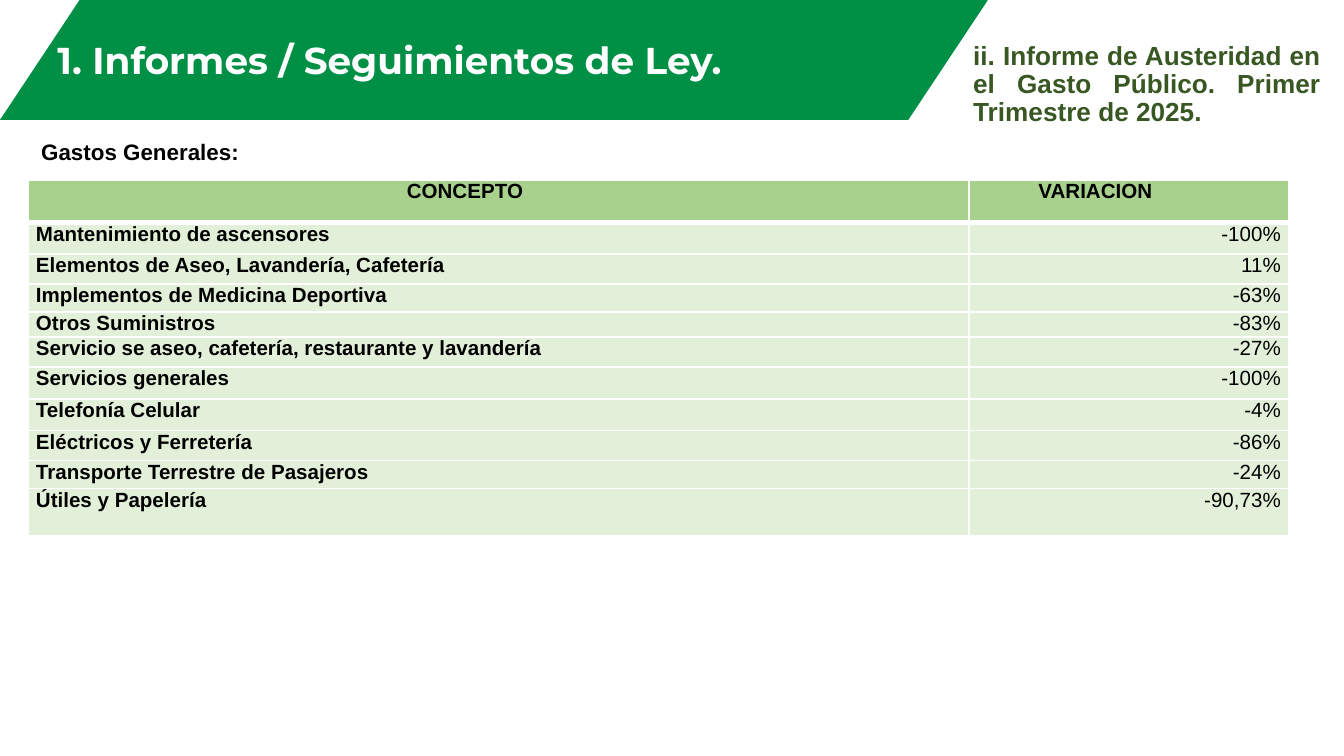
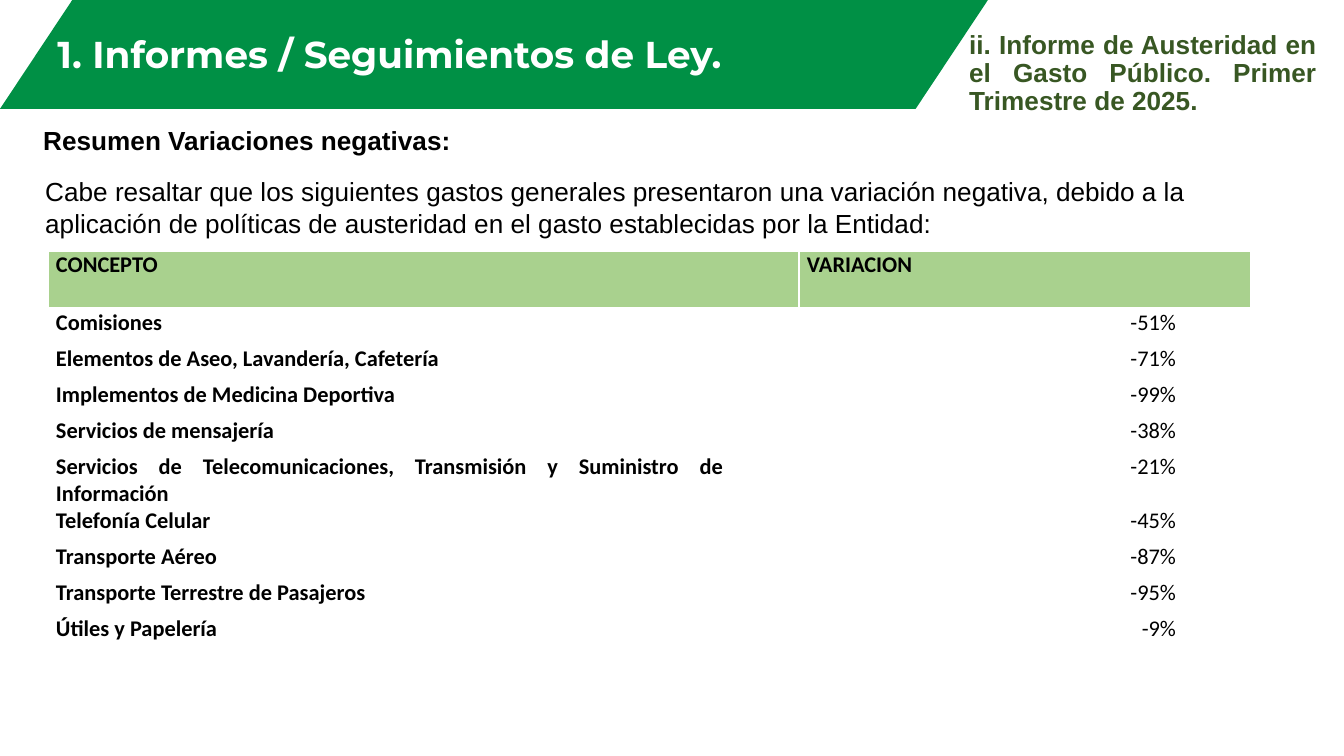
from lxml.etree import SubElement as Sub
from pptx import Presentation
from pptx.dml.color import RGBColor as Rgb
from pptx.enum.shapes import MSO_SHAPE as Shape
from pptx.enum.text import MSO_ANCHOR as Anchor, MSO_AUTO_SIZE as Fit, PP_ALIGN as Align
from pptx.oxml.ns import qn
from pptx.util import Emu, Pt

SCALE = 9144000 / 1344
GREEN, LIME, PALE, MOSS = "009045", "A9D18E", "E2F0D9", "385723"
WHITE, BLACK = "FFFFFF", "000000"
TITLE = "1. Informes / Seguimientos de Ley. "
TOPIC = "ii. Informe de Austeridad en el Gasto Público. Primer Trimestre de 2025."
NOTE = ("Cabe resaltar que los siguientes gastos generales presentaron una variación negativa, "
        "debido a la aplicación de políticas de austeridad en el gasto establecidas por la Entidad:")
HEAD = ("CONCEPTO", "VARIACION")
COSTS = [
    ("Mantenimiento de ascensores", "-100%"),
    ("Elementos de Aseo, Lavandería, Cafetería", "11%"),
    ("Implementos de Medicina Deportiva", "-63%"),
    ("Otros Suministros", "-83%"),
    ("Servicio se aseo, cafetería, restaurante y lavandería", "-27%"),
    ("Servicios generales", "-100%"),
    ("Telefonía Celular", "-4%"),
    ("Eléctricos y Ferretería", "-86%"),
    ("Transporte Terrestre de Pasajeros", "-24%"),
    ("Útiles y Papelería", "-90,73%"),
]
DROPS = [
    ("Comisiones", "-51%"),
    ("Elementos de Aseo, Lavandería, Cafetería", "-71%"),
    ("Implementos de Medicina Deportiva", "-99%"),
    ("Servicios de mensajería", "-38%"),
    ("Servicios de Telecomunicaciones, Transmisión y Suministro de Información", "-21%"),
    ("Telefonía Celular", "-45%"),
    ("Transporte Aéreo", "-87%"),
    ("Transporte Terrestre de Pasajeros", "-95%"),
    ("Útiles y Papelería", "-9%"),
]


def px(num):
    """Turn pixels into EMU."""
    return Emu(round(num * SCALE))


def paint(fill, tone):
    """Fill with a hex colour, or with nothing."""
    if tone:
        fill.solid()
        fill.fore_color.rgb = Rgb.from_string(tone)
    else:
        fill.background()


def write(frame, text, size, tone=BLACK, bold=True, font="Arial",
          align=Align.JUSTIFY, lead=None, pad=0):
    """Write one paragraph, with an optional right margin."""
    para = frame.paragraphs[0]
    para.alignment = align
    if lead:
        para.line_spacing = lead
    if pad:
        para._p.get_or_add_pPr().set("marR", str(px(pad)))
    run = para.add_run()
    run.text = text
    run.font.name, run.font.size, run.font.bold = font, Pt(size), bold
    run.font.color.rgb = Rgb.from_string(tone)


def label(slide, box, text, size, **look):
    """Add a wrapped text box."""
    frame = slide.shapes.add_textbox(*map(px, box)).text_frame
    frame.word_wrap = True
    write(frame, text, size, **look)


def frame_up(slide, high, top, spot):
    """Add the green band, the title and the topic."""
    band = slide.shapes.add_shape(Shape.PARALLELOGRAM, 0, 0, px(988), px(high))
    band.adjustments[0] = 0.664
    band.shadow.inherit = False
    paint(band.fill, GREEN)
    band.line.fill.background()
    slide.shapes._spTree.insert(2, band._element)
    title = slide.shapes.title
    title.left, title.top, title.width, title.height = map(px, (0, top, 790, 58))
    frame = title.text_frame
    frame.auto_size, frame.word_wrap = Fit.NONE, True
    frame.vertical_anchor = Anchor.BOTTOM
    write(frame, TITLE, 20, WHITE, font="Montserrat", align=Align.CENTER, lead=0.9)
    label(slide, (*spot, 374, 99), TOPIC, 14, tone=MOSS, lead=0.9)


def edge(cell, top, base):
    """Draw white borders, with widths for top and base."""
    props = cell._tc.get_or_add_tcPr()
    for side, wide in zip("LRTB", (1, 1, top, base)):
        line = Sub(props, qn("a:ln" + side), w=str(Pt(wide)))
        Sub(Sub(line, qn("a:solidFill")), qn("a:srgbClr"), val=WHITE)


def grid(slide, spot, cols, rows, data, size, font, fill=None,
         head=Align.JUSTIFY, pad=0):
    """Add a table of concepts and variations."""
    box = (*spot, sum(cols), sum(rows))
    table = slide.shapes.add_table(len(rows), len(cols), *map(px, box)).table
    table.first_row = table.horz_banding = False
    for col, wide in zip(table.columns, cols):
        col.width = px(wide)
    for row, high in zip(table.rows, rows):
        row.height = px(high)
    for i, line in enumerate([HEAD, *data]):
        for j, text in enumerate(line):
            cell = table.cell(i, j)
            cell.margin_left = cell.margin_right = px(8)
            cell.margin_top = cell.margin_bottom = 0
            edge(cell, 3 if i == 1 else 1, 3 if i == 0 else 1)
            paint(cell.fill, fill if i else LIME)
            align = (Align.RIGHT if j else Align.JUSTIFY) if i else head
            write(cell.text_frame, text, size, bold=not (i and j), font=font,
                  align=align, pad=pad if i else 67)


def costs(slide):
    """Build the slide of general costs."""
    frame_up(slide, 120, 31, (960, 36))
    label(slide, (28, 132, 227, 40), "Gastos Generales:", 12)
    rows = [43, 31, 30, 28, 25, 30, 32, 32, 30, 28, 47]
    grid(slide, (28, 180), (941, 320), rows, COSTS, 11, "Arial", PALE, Align.CENTER)


def drops(slide):
    """Build the slide of negative variations."""
    frame_up(slide, 109, 25, (956, 25))
    label(slide, (30, 118, 452, 46), "Resumen Variaciones negativas:", 14)
    label(slide, (32, 169, 1259, 77), NOTE, 14, bold=False, align=Align.LEFT)
    rows = [58] + [36] * 4 + [54] + [36] * 4
    grid(slide, (48, 251), (751, 452), rows, DROPS, 12, "Calibri", pad=67)


def main():
    """Build and save the deck."""
    deck = Presentation()
    deck.slide_width, deck.slide_height = px(1344), px(756)
    for build in (costs, drops):
        build(deck.slides.add_slide(deck.slide_layouts[5]))
    deck.save("out.pptx")


if __name__ == "__main__":
    main()
